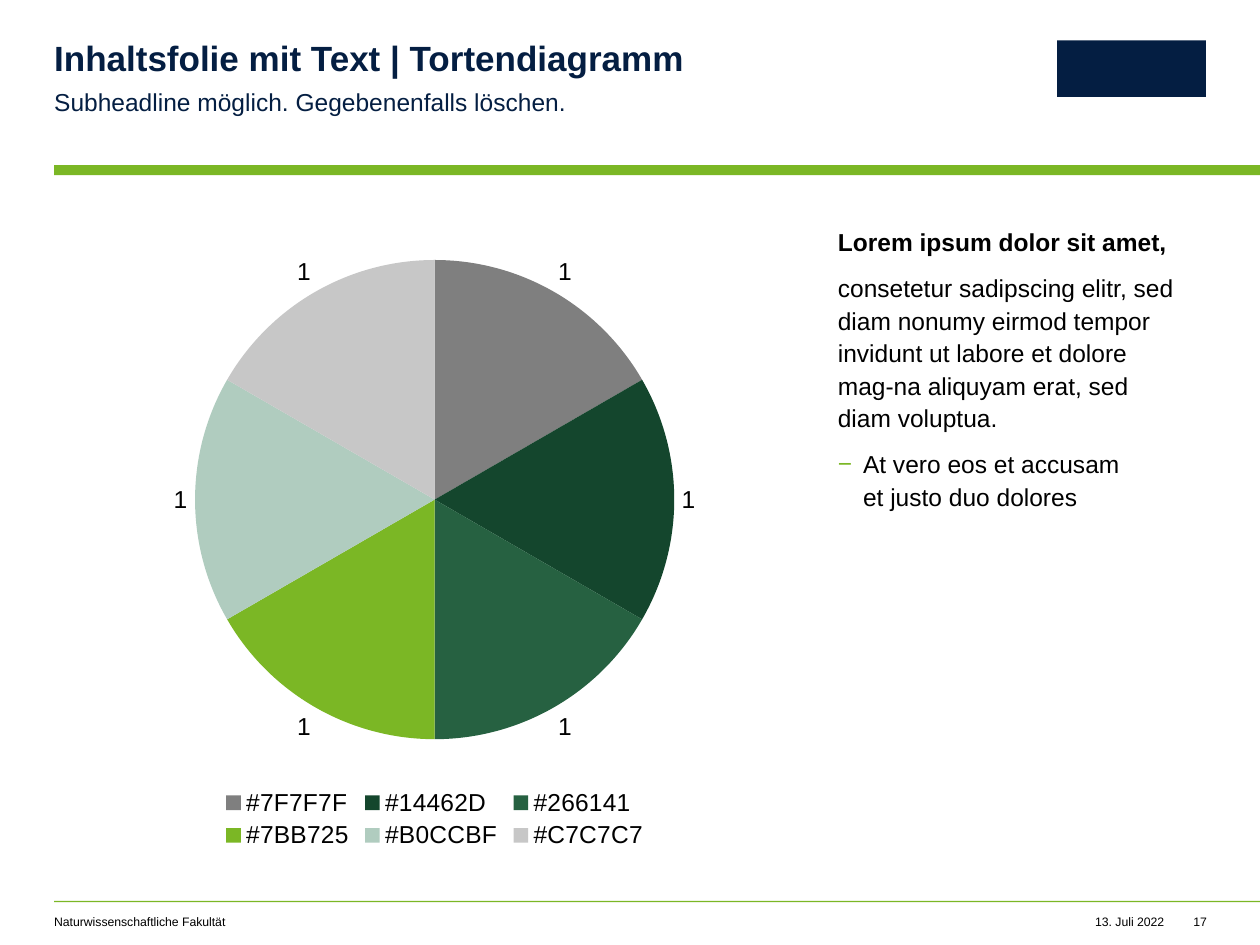
from lxml.etree import SubElement
from pptx import Presentation
from pptx.chart.data import CategoryChartData
from pptx.dml.color import RGBColor
from pptx.enum.chart import XL_CHART_TYPE, XL_LABEL_POSITION, XL_LEGEND_POSITION
from pptx.enum.shapes import MSO_SHAPE
from pptx.enum.text import MSO_ANCHOR, MSO_AUTO_SIZE, PP_ALIGN
from pptx.oxml.ns import qn
from pptx.util import Inches, Pt

COLUMNS, ROWS = 100, 75  # square grid cells
MARGIN = 4.3
CONTENT_TOP, CONTENT_HEIGHT = 17.8, 50
FOOTER_TOP = 72.6
NAVY, GREEN, BLACK = "041E42", "7BB725", "000000"
SLICES = ["7F7F7F", "14462D", "266141", GREEN, "B0CCBF", "C7C7C7"]


def color(value):
    return RGBColor.from_string(value)


class SlideBuilder:
    font = "Arial"

    def __init__(self, deck):
        self.cell_width = deck.slide_width / COLUMNS
        self.cell_height = deck.slide_height / ROWS
        self.page = deck.slides.add_slide(deck.slide_layouts[5])

    def area(self, left, top, width, height):
        return (round(left * self.cell_width), round(top * self.cell_height),
                round(width * self.cell_width), round(height * self.cell_height))

    def style(self, font, size, tone=BLACK, bold=False):
        font.name, font.size, font.bold = self.font, Pt(size), bold
        font.color.rgb = color(tone)

    def block(self, *place, tone):
        shape = self.page.shapes.add_shape(MSO_SHAPE.RECTANGLE, *self.area(*place))
        shape.shadow.inherit = False
        shape.fill.solid()
        shape.fill.fore_color.rgb = color(tone)
        shape.line.fill.background()

    def fill_text(self, box, lines, size, tone, bold, spacing, after, align, wrap=True):
        frame = box.text_frame
        frame.margin_left = frame.margin_top = frame.margin_right = frame.margin_bottom = 0
        frame.vertical_anchor = MSO_ANCHOR.TOP
        frame.auto_size = MSO_AUTO_SIZE.NONE
        frame.word_wrap = wrap
        for index, line in enumerate(lines):
            para = frame.add_paragraph() if index else frame.paragraphs[0]
            para.text = line
            para.alignment = align
            para.line_spacing = spacing
            para.space_before, para.space_after = Pt(0), Pt(after)
            for span in para.runs:
                self.style(span.font, size, tone, bold)
        return frame

    def title(self, *place, text):
        box = self.page.shapes.title
        box.left, box.top, box.width, box.height = self.area(*place)
        self.fill_text(box, [text], 20, NAVY, True, 0.9, 0, PP_ALIGN.LEFT)

    def text(self, *place, lines, size=14, tone=BLACK, spacing=1.1, after=8,
             align=PP_ALIGN.LEFT, wrap=True):
        box = self.page.shapes.add_textbox(*self.area(*place))
        return self.fill_text(box, lines, size, tone, False, spacing, after, align, wrap)

    def footer(self, left, width, text, align=PP_ALIGN.LEFT):
        self.text(left, FOOTER_TOP, width, 1.2, lines=[text], size=7, spacing=1,
                  after=0, align=align, wrap=align == PP_ALIGN.LEFT)

    def bullet(self, para, mark, tone):
        properties = para._p.get_or_add_pPr()
        indent = Inches(0.2)
        properties.set("marL", str(indent))
        properties.set("indent", str(-indent))
        holder = SubElement(properties, qn("a:buClr"))
        SubElement(holder, qn("a:srgbClr"), val=tone)
        SubElement(properties, qn("a:buFont"), typeface=self.font)
        SubElement(properties, qn("a:buChar"), char=mark)

    def pie(self, *place, tones):
        data = CategoryChartData()
        data.categories = [f"#{tone}" for tone in tones]
        data.add_series("Series 1", [1] * len(tones))
        chart = self.page.shapes.add_chart(
            XL_CHART_TYPE.PIE, *self.area(*place), data).chart
        self.style(chart.font, 10)
        chart.has_title = False
        chart.has_legend = True
        chart.legend.position = XL_LEGEND_POSITION.BOTTOM
        chart.legend.include_in_layout = False
        self.style(chart.legend.font, 14)
        plot = chart.plots[0]
        plot.vary_by_categories = True
        plot.has_data_labels = True
        labels = plot.data_labels
        labels.show_value = True
        labels.show_percentage = False
        labels.position = XL_LABEL_POSITION.OUTSIDE_END
        self.style(labels.font, 14)
        for index, tone in enumerate(tones):
            fill = plot.series[0].points[index].format.fill
            fill.solid()
            fill.fore_color.rgb = color(tone)


def main():
    deck = Presentation()
    deck.slide_width, deck.slide_height = Inches(10), Inches(7.5)
    slide = SlideBuilder(deck)

    # Rules and a plain block in the logo's place
    slide.block(MARGIN, 13.1, COLUMNS - MARGIN, 0.8, tone=GREEN)
    slide.block(MARGIN, 71.5, COLUMNS - MARGIN, 0.1, tone=GREEN)
    slide.block(83.9, 3.2, 11.8, 4.5, tone=NAVY)

    # Heading
    slide.title(MARGIN, 3.3, 56.1, 3, text="Inhaltsfolie mit Text | Tortendiagramm")
    slide.text(MARGIN, 6.7, 56.1, 2.4, tone=NAVY,
               lines=["Subheadline möglich. Gegebenenfalls löschen."])

    # Pie chart and commentary
    slide.pie(MARGIN, CONTENT_TOP, 60.4, CONTENT_HEIGHT, tones=SLICES)
    frame = slide.text(66.5, CONTENT_TOP, 29.3, CONTENT_HEIGHT, lines=[
        "Lorem ipsum dolor sit amet,",
        "consetetur sadipscing elitr, sed diam nonumy eirmod tempor invidunt ut "
        "labore et dolore mag-na aliquyam erat, sed diam voluptua.",
        "At vero eos et accusam\net justo duo dolores",
    ])
    frame.margin_right = Inches(0.2)
    frame.paragraphs[0].runs[0].font.bold = True
    slide.bullet(frame.paragraphs[2], "−", GREEN)

    # Footer
    slide.footer(MARGIN, 44.9, "Naturwissenschaftliche Fakultät")
    slide.footer(85.3, 7.1, "13. Juli 2022", PP_ALIGN.RIGHT)
    slide.footer(93.8, 2, "17", PP_ALIGN.RIGHT)

    deck.save("out.pptx")


if __name__ == "__main__":
    main()
